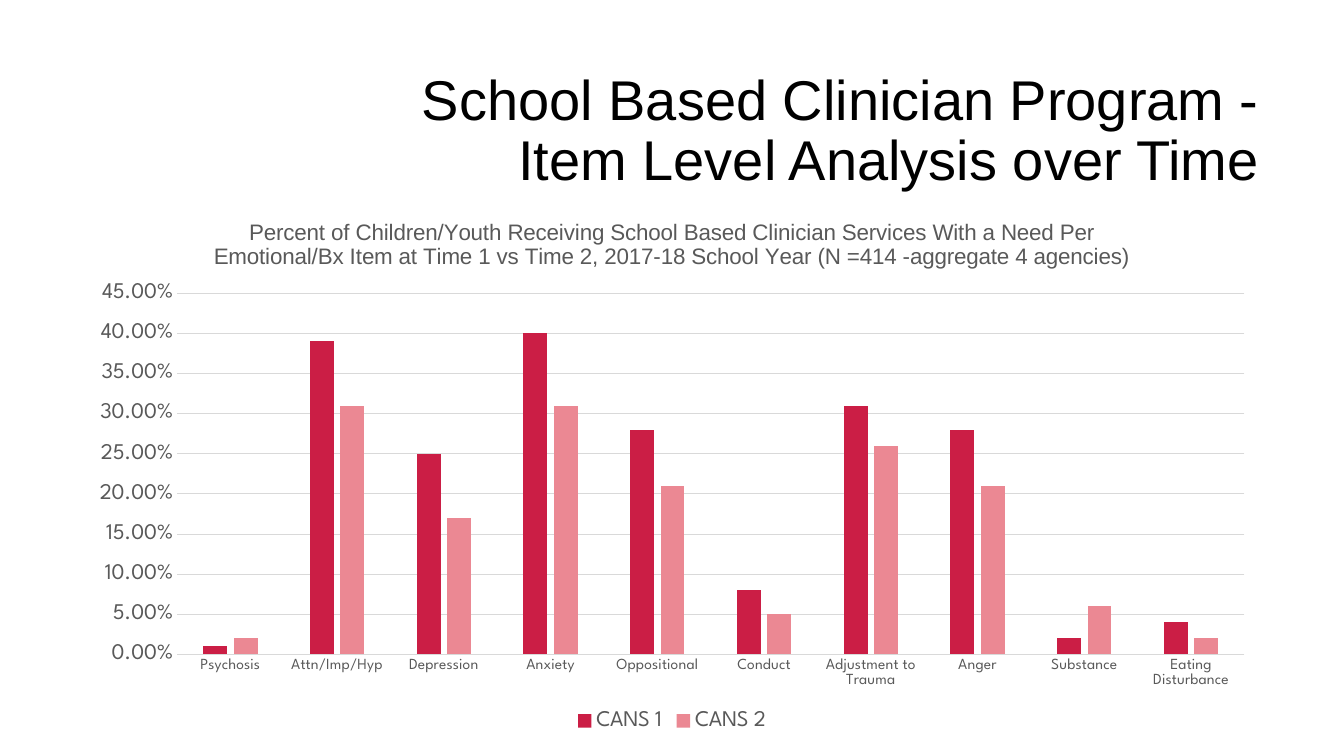
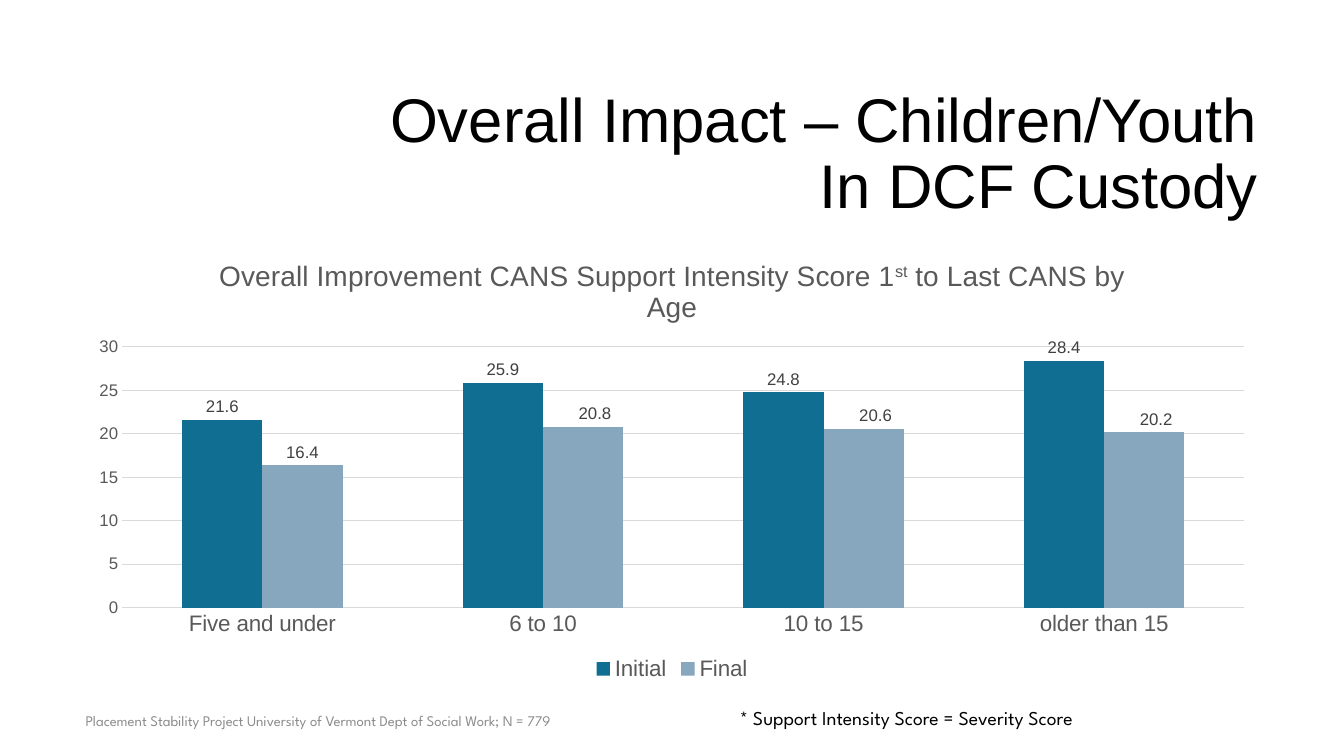
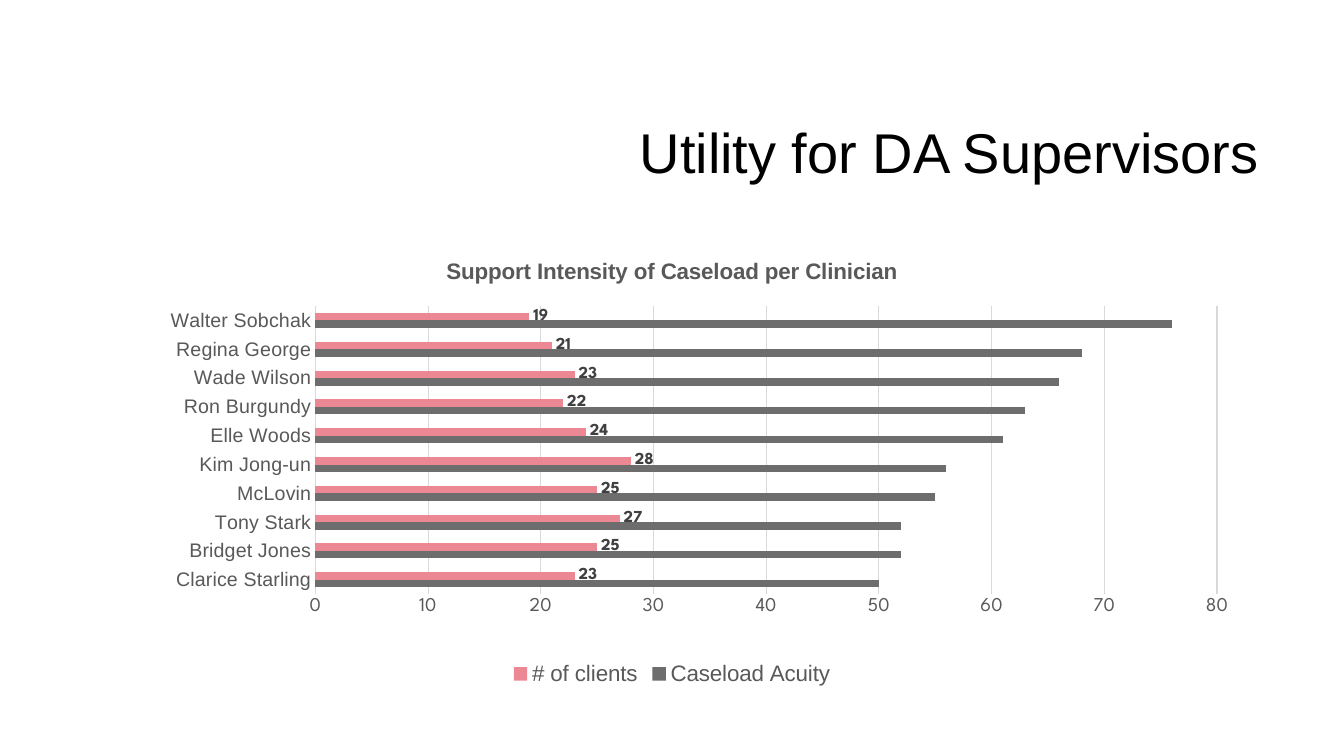
from lxml import etree
from pptx import Presentation
from pptx.chart.data import CategoryChartData
from pptx.dml.color import RGBColor
from pptx.enum.chart import XL_CHART_TYPE as ChartType
from pptx.enum.chart import XL_LABEL_POSITION as LabelPosition
from pptx.enum.chart import XL_LEGEND_POSITION as LegendPosition
from pptx.enum.chart import XL_TICK_MARK as TickMark
from pptx.enum.text import MSO_ANCHOR as Anchor
from pptx.enum.text import PP_ALIGN as Align
from pptx.oxml import parse_xml
from pptx.oxml.ns import qn
from pptx.util import Inches, Pt

BLACK = RGBColor(0x00, 0x00, 0x00)
LABEL_GRAY = RGBColor(0x40, 0x40, 0x40)
TEXT_GRAY = RGBColor(0x59, 0x59, 0x59)
BAR_GRAY = RGBColor(0x6D, 0x6D, 0x6D)
NOTE_GRAY = RGBColor(0x8C, 0x8C, 0x8C)
GRID_GRAY = RGBColor(0xD9, 0xD9, 0xD9)
CRIMSON = RGBColor(0xCB, 0x1E, 0x45)
PINK = RGBColor(0xEB, 0x88, 0x93)
TEAL = RGBColor(0x10, 0x6E, 0x92)
STEEL = RGBColor(0x87, 0xA7, 0xBE)
SANS = "Arial"
SPARTAN = "League Spartan"
CHART_NS = "http://schemas.openxmlformats.org/drawingml/2006/chart"

SLIDES = [
    {
        "title": "School Based Clinician Program - Item Level Analysis over Time",
        "title_size": 40, "title_top": 0.66, "title_height": 1.31,
        "type": ChartType.COLUMN_CLUSTERED, "top": 1.96, "height": 5.34,
        "heading": [("Percent of Children/Youth Receiving School Based Clinician Services With a Need Per "
                     "Emotional/Bx Item at Time 1 vs Time 2, 2017-18 School Year "
                     "(N =414 -aggregate 4 agencies)", False)],
        "heading_size": 16, "heading_bold": False,
        "categories": ["Psychosis", "Attn/Imp/Hyp", "Depression", "Anxiety", "Oppositional", "Conduct",
                       "Adjustment to Trauma", "Anger", "Substance", "Eating Disturbance"],
        "series": [
            ("CANS 1", CRIMSON, [0.01, 0.39, 0.25, 0.4, 0.28, 0.08, 0.31, 0.28, 0.02, 0.04]),
            ("CANS 2", PINK, [0.02, 0.31, 0.17, 0.31, 0.21, 0.05, 0.26, 0.21, 0.06, 0.02]),
        ],
        "gap": 219, "overlap": -27, "maximum": 0.45, "step": 0.05, "format": "0.00%",
        "category_font": (SPARTAN, 11), "value_font": (SPARTAN, 16), "legend_font": SPARTAN,
        "axis_line": True, "plot": (0.085, 0.178, 0.895, 0.671),
        "labelled": [], "label_font": SPARTAN, "label_bold": False, "shifted": [], "notes": [],
    },
    {
        "title": "Overall Impact – Children/Youth In DCF Custody",
        "title_size": 44, "title_top": 0.84, "title_height": 1.41,
        "type": ChartType.COLUMN_CLUSTERED, "top": 2.4, "height": 4.4,
        "heading": [("Overall Improvement CANS Support Intensity Score 1", False), ("st", True),
                    (" to Last CANS by Age", False)],
        "heading_size": 20, "heading_bold": False,
        "categories": ["Five and under", "6 to 10", "10 to 15", "older than 15"],
        "series": [
            ("Initial", TEAL, [21.6, 25.9, 24.8, 28.4]),
            ("Final", STEEL, [16.4, 20.8, 20.6, 20.2]),
        ],
        "gap": 150, "overlap": 0, "maximum": 30, "step": 5, "format": "General",
        "category_font": (SANS, 16), "value_font": (SANS, 12), "legend_font": SANS,
        "axis_line": False, "plot": (0.039, 0.237, 0.941, 0.588),
        "labelled": [0, 1], "label_font": SANS, "label_bold": False,
        "shifted": [(1, 1), (1, 2), (1, 3)],
        "notes": [
            ("Placement Stability Project University of Vermont Dept of Social Work; N = 779",
             0.75, 8.5, 0.4, 10.5, NOTE_GRAY, Anchor.MIDDLE),
            ("* Support Intensity Score = Severity Score", 7.24, 5.63, 0.34, 14, BLACK, Anchor.TOP),
        ],
    },
    {
        "title": "Utility for DA Supervisors",
        "title_size": 40, "title_top": 0.84, "title_height": 1.41,
        "type": ChartType.BAR_CLUSTERED, "top": 2.37, "height": 4.48,
        "heading": [("Support Intensity of Caseload per Clinician", False)],
        "heading_size": 16, "heading_bold": True,
        "categories": ["Clarice Starling", "Bridget Jones", "Tony Stark", "McLovin", "Kim Jong-un",
                       "Elle Woods", "Ron Burgundy", "Wade Wilson", "Regina George", "Walter Sobchak"],
        "series": [
            ("Caseload Acuity", BAR_GRAY, [50, 52, 52, 55, 56, 61, 63, 66, 68, 76]),
            ("# of clients", PINK, [23, 25, 27, 25, 28, 24, 22, 23, 21, 19]),
        ],
        "gap": 182, "overlap": 0, "maximum": 80, "step": 10, "format": "General",
        "category_font": (SANS, 14), "value_font": (SPARTAN, 14), "legend_font": SANS,
        "axis_line": True, "plot": (0.201, 0.149, 0.756, 0.638),
        "labelled": [1], "label_font": SPARTAN, "label_bold": True, "shifted": [], "notes": [],
    },
]


def style_font(font, name, size, color, bold=False):
    font.name = name
    font.size = Pt(size)
    font.bold = bold
    font.color.rgb = color


def add_text(page, area, text, name, size, color, anchor, align=Align.LEFT, spacing=1.0):
    box = page.shapes.add_textbox(*[Inches(length) for length in area])
    frame = box.text_frame
    frame.word_wrap = True
    frame.vertical_anchor = anchor
    para = frame.paragraphs[0]
    para.alignment = align
    para.line_spacing = spacing
    span = para.add_run()
    span.text = text
    style_font(span.font, name, size, color)


deck = Presentation()
deck.slide_width = Inches(13.33)
deck.slide_height = Inches(7.5)

for content in SLIDES:
    page = deck.slides.add_slide(deck.slide_layouts[6])
    add_text(page, (3.16, content["title_top"], 9.42, content["title_height"]), content["title"],
             SANS, content["title_size"], BLACK, Anchor.MIDDLE, Align.RIGHT, 0.9)

    data = CategoryChartData(number_format=content["format"])
    data.categories = content["categories"]
    for name, color, values in content["series"]:
        data.add_series(name, values)
    chart = page.shapes.add_chart(content["type"], Inches(0.75), Inches(content["top"]),
                                  Inches(11.83), Inches(content["height"]), data).chart
    style_font(chart.font, SPARTAN, 10, BLACK)

    chart.has_title = True
    para = chart.chart_title.text_frame.paragraphs[0]
    for text, raised in content["heading"]:
        span = para.add_run()
        span.text = text
        style_font(span.font, SANS, content["heading_size"], TEXT_GRAY, content["heading_bold"])
        if raised:
            span.font._element.set("baseline", "30000")
    chart.chart_title.include_in_layout = False

    chart.has_legend = True
    chart.legend.position = LegendPosition.BOTTOM
    chart.legend.include_in_layout = False
    style_font(chart.legend.font, content["legend_font"], 16, TEXT_GRAY)

    for axis, (name, size) in ((chart.category_axis, content["category_font"]),
                               (chart.value_axis, content["value_font"])):
        axis.major_tick_mark = TickMark.NONE
        axis.minor_tick_mark = TickMark.NONE
        style_font(axis.tick_labels.font, name, size, TEXT_GRAY)
        axis.format.line.fill.background()
    if content["axis_line"]:
        chart.category_axis.format.line.color.rgb = GRID_GRAY
        chart.category_axis.format.line.width = Pt(0.75)

    scale = chart.value_axis
    scale.minimum_scale = 0
    scale.maximum_scale = content["maximum"]
    scale.major_unit = content["step"]
    scale.tick_labels.number_format = content["format"]
    scale.tick_labels.number_format_is_linked = False
    scale.has_major_gridlines = True
    scale.major_gridlines.format.line.color.rgb = GRID_GRAY
    scale.major_gridlines.format.line.width = Pt(0.75)

    plot = chart.plots[0]
    plot.vary_by_categories = False
    plot.gap_width = content["gap"]
    plot.overlap = content["overlap"]
    for series, (name, color, values) in zip(plot.series, content["series"]):
        series.invert_if_negative = False
        series.format.fill.solid()
        series.format.fill.fore_color.rgb = color

    for index in content["labelled"]:
        labels = plot.series[index].data_labels
        labels.show_value = True
        labels.position = LabelPosition.OUTSIDE_END
        style_font(labels.font, content["label_font"], 12, LABEL_GRAY, content["label_bold"])
    for index, point in content["shifted"]:
        label = plot.series[index].points[point].data_label
        style_font(label.font, content["label_font"], 12, LABEL_GRAY)
        label.position = LabelPosition.OUTSIDE_END
        entry = plot.series[index]._element.findall(".//" + qn("c:dLbl"))[-1]
        entry.find(qn("c:idx")).addnext(parse_xml(
            f'<c:layout xmlns:c="{CHART_NS}"><c:manualLayout>'
            '<c:x val="0.01"/><c:y val="0"/></c:manualLayout></c:layout>'))

    area = chart._chartSpace.find(".//" + qn("c:plotArea"))
    for old in area.findall(qn("c:layout")):
        area.remove(old)
    layout = etree.Element(qn("c:layout"))
    manual = etree.SubElement(layout, qn("c:manualLayout"))
    settings = [("layoutTarget", "inner"), ("xMode", "edge"), ("yMode", "edge")]
    settings += zip("xywh", content["plot"])
    for tag, value in settings:
        etree.SubElement(manual, qn("c:" + tag)).set("val", str(value))
    area.insert(0, layout)

    for text, left, width, height, size, color, anchor in content["notes"]:
        add_text(page, (left, 6.95, width, height), text, SPARTAN, size, color, anchor)

deck.save("out.pptx")
